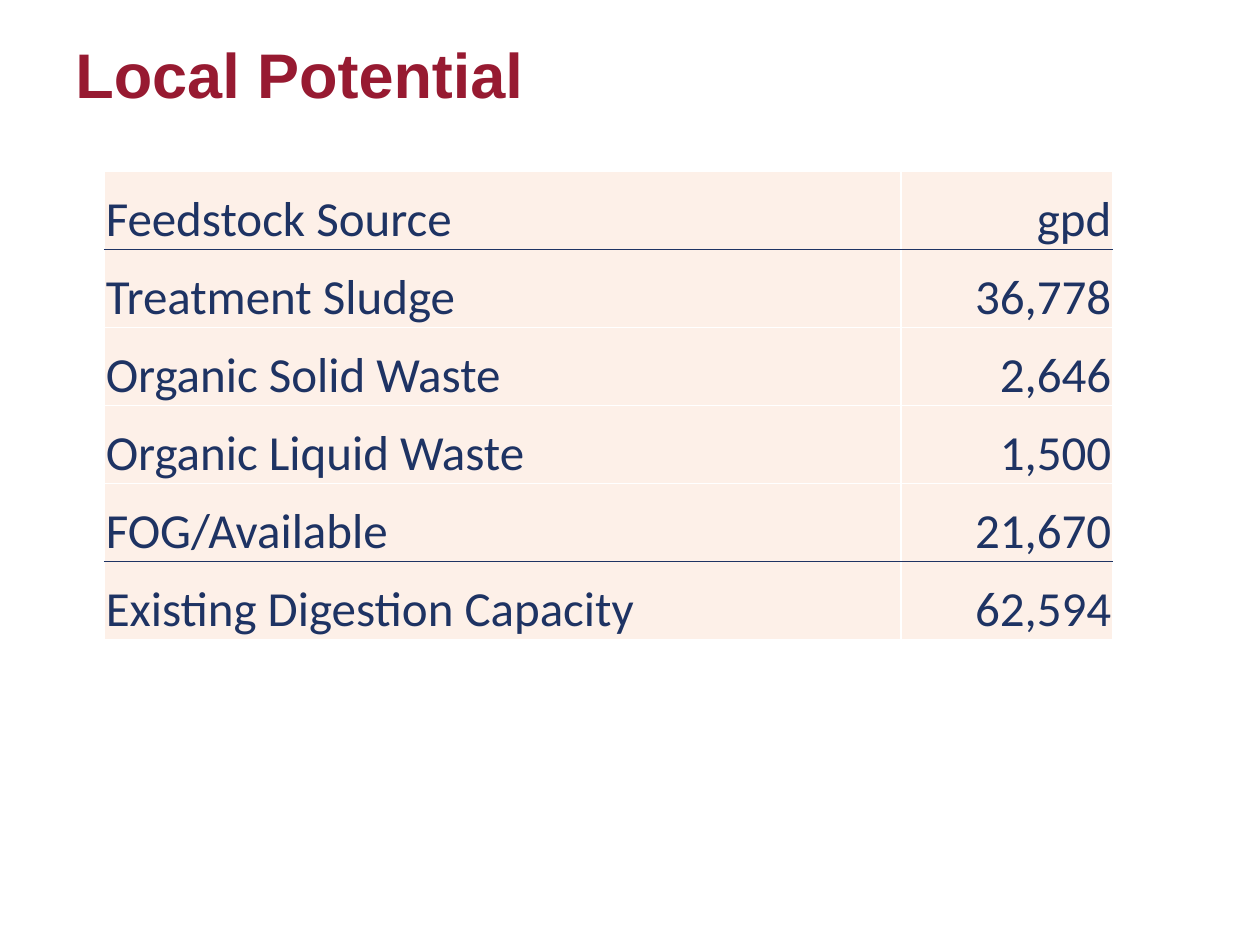
"""Build the Local Potential slide with its feedstock table."""
import lxml.etree
import pptx
import pptx.dml.color
import pptx.enum.text
import pptx.oxml.ns
import pptx.util

Inches = pptx.util.Inches
Pt = pptx.util.Pt
RGBColor = pptx.dml.color.RGBColor
PP_ALIGN = pptx.enum.text.PP_ALIGN
MSO_ANCHOR = pptx.enum.text.MSO_ANCHOR
qn = pptx.oxml.ns.qn

TITLE = "Local Potential"
FEEDSTOCKS = [
    ("Feedstock Source", "gpd"),
    ("Treatment Sludge", "36,778"),
    ("Organic Solid Waste", "2,646"),
    ("Organic Liquid Waste", "1,500"),
    ("FOG/Available", "21,670"),
    ("Existing Digestion Capacity", "62,594"),
]
COLUMN_WIDTHS = (6.32, 1.68)
COLUMN_ALIGNMENTS = (PP_ALIGN.LEFT, PP_ALIGN.RIGHT)
ROW_HEIGHT = 0.62
RULED_ROWS = (0, len(FEEDSTOCKS) - 2)

CRIMSON = RGBColor(0x97, 0x1A, 0x31)
NAVY = RGBColor(0x1E, 0x33, 0x63)
CREAM = RGBColor(0xFD, 0xF0, 0xE8)
WHITE = RGBColor(0xFF, 0xFF, 0xFF)


def style_text(paragraph, font_name, size, color, bold=False):
    paragraph.font.name = font_name
    paragraph.font.size = Pt(size)
    paragraph.font.color.rgb = color
    paragraph.font.bold = bold


def set_borders(cell, top, bottom):
    properties = cell._tc.get_or_add_tcPr()
    sides = (("lnL", WHITE), ("lnR", WHITE), ("lnT", top), ("lnB", bottom))
    for position, (side, color) in enumerate(sides):
        line = lxml.etree.Element(qn(f"a:{side}"), w=str(Pt(1)))
        fill = lxml.etree.SubElement(line, qn("a:solidFill"))
        lxml.etree.SubElement(fill, qn("a:srgbClr"), val=str(color))
        properties.insert(position, line)


def add_title(slide):
    shape = slide.shapes.add_textbox(Inches(0.5), Inches(0.3), Inches(9), Inches(1.03))
    shape.text_frame.word_wrap = True
    paragraph = shape.text_frame.paragraphs[0]
    paragraph.text = TITLE
    paragraph.line_spacing = 0.9
    style_text(paragraph, "Arial", 36, CRIMSON, bold=True)


def add_feedstock_table(slide):
    table = slide.shapes.add_table(
        len(FEEDSTOCKS), len(COLUMN_WIDTHS), Inches(0.83), Inches(1.36),
        Inches(sum(COLUMN_WIDTHS)), Inches(ROW_HEIGHT * len(FEEDSTOCKS)),
    ).table
    table.horz_banding = False
    for column, width in zip(table.columns, COLUMN_WIDTHS):
        column.width = Inches(width)
    for row_index, values in enumerate(FEEDSTOCKS):
        table.rows[row_index].height = Inches(ROW_HEIGHT)
        top = NAVY if row_index - 1 in RULED_ROWS else WHITE
        bottom = NAVY if row_index in RULED_ROWS else WHITE
        for column_index, value in enumerate(values):
            cell = table.cell(row_index, column_index)
            cell.fill.solid()
            cell.fill.fore_color.rgb = CREAM
            cell.vertical_anchor = MSO_ANCHOR.BOTTOM
            cell.margin_left = cell.margin_right = cell.margin_top = Inches(0.01)
            cell.margin_bottom = 0
            paragraph = cell.text_frame.paragraphs[0]
            paragraph.text = value
            paragraph.alignment = COLUMN_ALIGNMENTS[column_index]
            style_text(paragraph, "Calibri", 28, NAVY)
            set_borders(cell, top, bottom)


def main():
    presentation = pptx.Presentation()
    presentation.slide_width = Inches(10)
    presentation.slide_height = Inches(7.5)
    slide = presentation.slides.add_slide(presentation.slide_layouts[6])
    add_title(slide)
    add_feedstock_table(slide)
    presentation.save("out.pptx")


if __name__ == "__main__":
    main()
